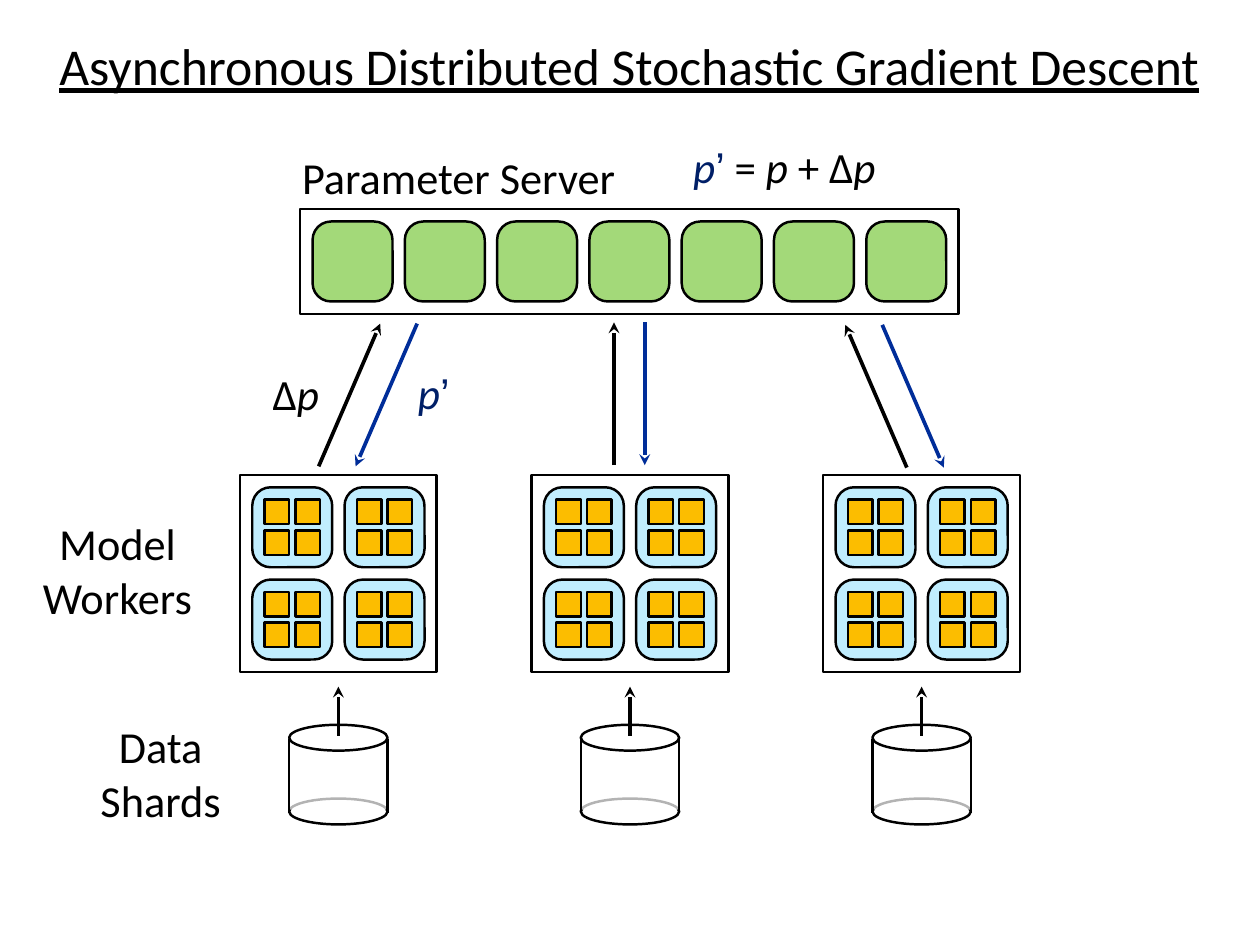
from dataclasses import dataclass
from itertools import product

from lxml.etree import SubElement
from pptx import Presentation
from pptx.dml.color import RGBColor
from pptx.enum.shapes import MSO_CONNECTOR as Connector, MSO_SHAPE as Preset
from pptx.enum.text import MSO_ANCHOR as Anchor, PP_ALIGN as Align
from pptx.oxml.ns import qn
from pptx.util import Pt


@dataclass(frozen=True)
class Theme:
    ink: str = "000000"
    paper: str = "FFFFFF"
    server_tile: str = "A3D979"
    worker_tile: str = "C0EDFE"
    core: str = "FCBD00"
    reply_arrow: str = "002D99"
    reply_text: str = "001F67"
    font: str = "Calibri"
    quote_font: str = "Arial"
    title_size: int = 42
    label_size: int = 36
    formula_size: int = 35
    outline: int = 2
    arrow: int = 3


THEME = Theme()
MARGIN, TILE, TILE_STEP = 10, 65, 75
CORE, CORE_STEP = 20, 25
WORKER_SIZE = MARGIN + 2 * TILE_STEP
WORKER_LEFT, WORKER_TOP, WORKER_STEP = 195, 386, 237

# Runs of the formulas: text and what differs from the plain format
P = ("p", {"italic": True})
NEW_P = [("p", {"italic": True, "color": THEME.reply_text}),
         ("’", {"name": THEME.quote_font, "color": THEME.reply_text})]


def add_box(shapes, preset, left, top, width, height, fill=None, outlined=True):
    shape = shapes.add_shape(preset, Pt(left), Pt(top), Pt(width), Pt(height))
    shape.shadow.inherit = False
    if fill:
        shape.fill.solid()
        shape.fill.fore_color.rgb = RGBColor.from_string(fill)
    else:
        shape.fill.background()
    if outlined:
        shape.line.color.rgb = RGBColor.from_string(THEME.ink)
        shape.line.width = Pt(THEME.outline)
    else:
        shape.line.fill.background()
    return shape


def add_tile(shapes, left, top, fill):
    tile = add_box(shapes, Preset.ROUNDED_RECTANGLE, left, top, TILE, TILE, fill)
    tile.adjustments[0] = 0.23


def add_line(shapes, start, end, color=THEME.ink, width=THEME.outline, arrow=False):
    """Line from start to end, with the arrowhead at its end."""
    line = shapes.add_connector(Connector.STRAIGHT, *map(Pt, start + end))
    line.line.color.rgb = RGBColor.from_string(color)
    line.line.width = Pt(width)
    properties = line.element.spPr
    if arrow:
        SubElement(properties.find(qn("a:ln")), qn("a:tailEnd"), type="stealth")
    SubElement(properties, qn("a:effectLst"))


def add_text(shapes, box, paragraphs, size, align=Align.CENTER, **extra):
    """Each paragraph is a list of (text, format) runs."""
    frame = shapes.add_textbox(*map(Pt, box)).text_frame
    settings = {"word_wrap": True, "vertical_anchor": Anchor.MIDDLE,
                "margin_left": 0, "margin_right": 0, "margin_top": 0, "margin_bottom": 0}
    for name, value in settings.items():
        setattr(frame, name, value)
    for index, runs in enumerate(paragraphs):
        paragraph = frame.add_paragraph() if index else frame.paragraphs[0]
        paragraph.alignment = align
        for text, changes in runs:
            run = paragraph.add_run()
            run.text = text
            values = {"name": THEME.font, "size": Pt(size), "color": THEME.ink, **extra, **changes}
            run.font.color.rgb = RGBColor.from_string(values.pop("color"))
            for name, value in values.items():
                setattr(run.font, name, value)


def add_worker(shapes, left, top):
    """Framed two by two tiles, each with two by two cores."""
    for row, column in product(range(2), repeat=2):
        tile_left = left + MARGIN + column * TILE_STEP
        tile_top = top + MARGIN + row * TILE_STEP
        add_tile(shapes, tile_left, tile_top, THEME.worker_tile)
        for core_row, core_column in product(range(2), repeat=2):
            add_box(shapes, Preset.RECTANGLE,
                    tile_left + MARGIN + core_column * CORE_STEP,
                    tile_top + MARGIN + core_row * CORE_STEP,
                    CORE, CORE, THEME.core)
    add_box(shapes, Preset.RECTANGLE, left, top, WORKER_SIZE, WORKER_SIZE)


def add_shard(shapes, left, top, width=80):
    """Cylinder whose hidden rear edge is veiled, with an arrow going up."""
    rim, depth = 21, 60
    add_box(shapes, Preset.OVAL, left, top + depth, width, rim)
    veil = add_box(shapes, Preset.RECTANGLE, left, top + 13, width, 56, THEME.paper, outlined=False)
    SubElement(next(veil.element.iter(qn("a:srgbClr"))), qn("a:alpha"), val="70000")
    add_box(shapes, Preset.OVAL, left, top, width, rim)
    for side in (left, left + width):
        add_line(shapes, (side, top + 12), (side, top + 72))
    center = left + width / 2
    add_line(shapes, (center, top + 9), (center, top - 31), width=THEME.arrow, arrow=True)


def add_server(shapes, left, top, count=7):
    add_box(shapes, Preset.RECTANGLE, left, top, MARGIN + count * TILE_STEP, TILE + 2 * MARGIN)
    for index in range(count):
        add_tile(shapes, left + MARGIN + index * TILE_STEP, top + MARGIN, THEME.server_tile)


def add_exchange(shapes, left, top, slant, gap):
    """Black arrow up to the server and blue arrow back down."""
    bottom = top + 116
    style = {"width": THEME.arrow, "arrow": True}
    add_line(shapes, (left + slant, bottom), (left, top), **style)
    add_line(shapes, (left + gap, top), (left + gap + slant, bottom),
             color=THEME.reply_arrow, **style)


def add_labels(shapes):
    add_text(shapes, (245.5, 119, 267, 49), [[("Parameter Server", {})]],
             THEME.label_size, Align.LEFT)
    for box, words in (((14.5, 418, 162, 90), ("Model", "Workers")),
                       ((78.5, 583, 104, 90), ("Data", "Shards"))):
        add_text(shapes, box, [[(word, {})] for word in words], THEME.label_size)
    for box, runs in (((523, 109.5, 229, 52), NEW_P + [(" = ", {}), P, (" + ∆", {}), P]),
                      ((199, 294, 83, 52), [("∆", {}), P]),
                      ((311, 294, 83, 50), NEW_P)):
        add_text(shapes, box, [runs], THEME.formula_size)


def build_slide(presentation):
    slide = presentation.slides.add_slide(presentation.slide_layouts[6])
    shapes = slide.shapes

    # Workers with their data shards
    for index in range(3):
        left = WORKER_LEFT + index * WORKER_STEP
        group = shapes.add_group_shape().shapes
        add_worker(group, left, WORKER_TOP)
        add_shard(group, left + 40, WORKER_TOP + 203)

    # Parameter server and the arrows between it and the workers
    add_server(shapes.add_group_shape().shapes, 244, 170)
    for left, top, slant, gap in ((309, 263, -50, 30), (687, 264, 50, 30), (499, 262, 0, 25)):
        add_exchange(shapes, left, top, slant, gap)

    # Labels and title
    add_labels(shapes)
    add_text(shapes, (7, 24, 1009, 57),
             [[("Asynchronous Distributed Stochastic Gradient Descent", {})]],
             THEME.title_size, underline=True)


def main():
    presentation = Presentation()
    presentation.slide_width, presentation.slide_height = Pt(1024), Pt(768)
    build_slide(presentation)
    presentation.save("out.pptx")


if __name__ == "__main__":
    main()
